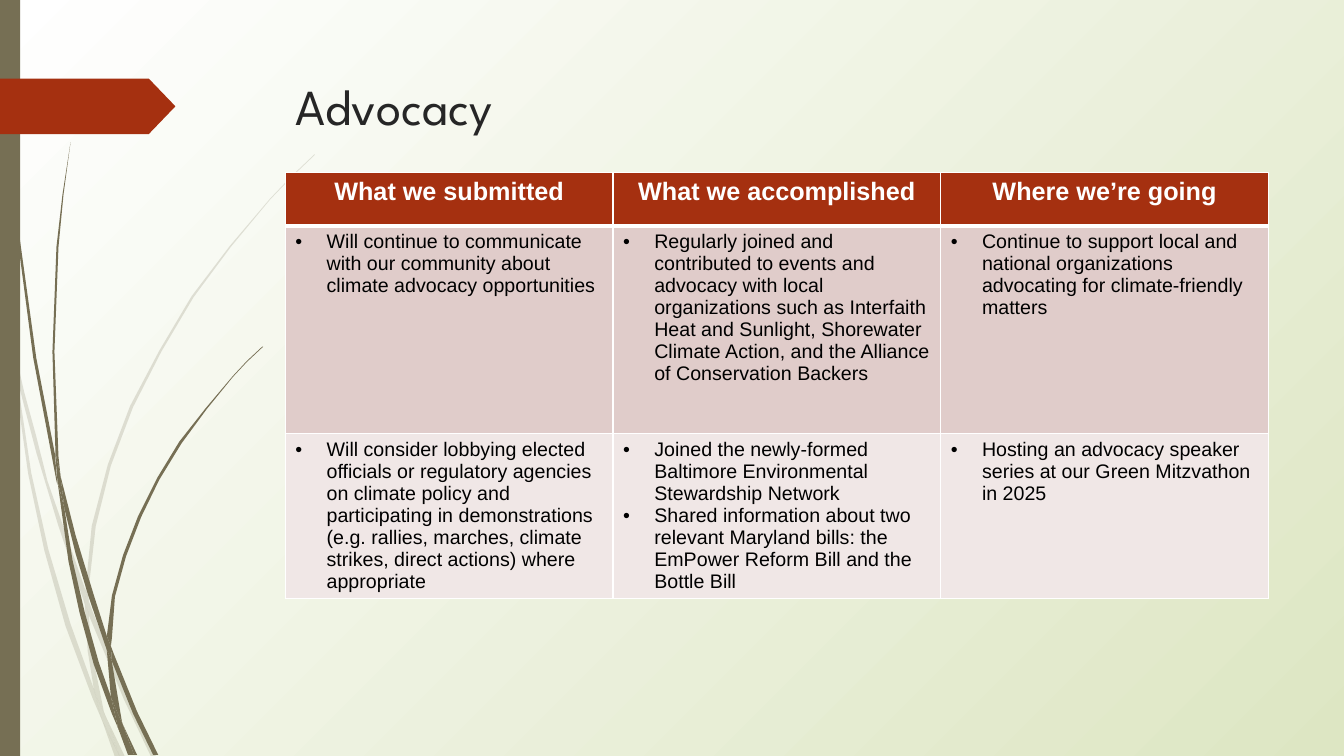
from dataclasses import dataclass

from lxml import etree
from pptx import Presentation
from pptx.dml.color import RGBColor
from pptx.enum import shapes, text
from pptx.oxml import ns
from pptx.util import Inches, Pt


@dataclass(frozen=True)
class Theme:
    stem: str = "766F54"
    rust: str = "A53010"
    pale: str = "DDE6C3"
    white: str = "FFFFFF"
    black: str = "000000"
    ink: str = "262626"
    bands: tuple = ("E0CCCA", "F0E7E6")
    head: str = "League Spartan"
    body: str = "Arial"
    title: int = 36
    label: int = 18
    item: int = 14


LOOK = Theme()

FAINT = [
    [(.11, 3.5), (.09, 3.22), (0, 2.82), (0, 2.99), (.1, 3.44)],
    [(.58, 5.22), (.84, 5.99), (.85, 5.86), (.62, 5.2), (.47, 4.77), (.36, 4.33),
     (.24, 3.89), (.14, 3.45), (.17, 3.76), (.36, 4.49)],
    [(.92, 6.07), (.88, 5.96), (.88, 6.1), (1.23, 6.94), (1.5, 7.51), (1.55, 7.51),
     (1.27, 6.92)],
    [(1.19, 7.51), (1.24, 7.51), (1.05, 7.11)],
    [(.93, 6.83), (.7, 6.19), (.48, 5.45), (.31, 4.69), (.17, 3.76), (.11, 3.5),
     (.28, 4.7), (.44, 5.46), (.65, 6.21), (.92, 6.93), (1.01, 7.14), (.99, 7.07)],
    [(.84, 5.99), (.87, 6.46), (.93, 6.83), (.96, 6.92), (1.05, 7.11), (1.03, 7.06),
     (.91, 6.46), (.88, 6.1), (.88, 6.08)],
    [(.88, 5.84), (.95, 5.22), (1.1, 4.62), (1.32, 4.04), (1.6, 3.49), (1.92, 2.95),
     (2.29, 2.45), (2.68, 1.98), (2.9, 1.75), (3.12, 1.54), (3.12, 1.53), (2.89, 1.75),
     (2.68, 1.97), (2.28, 2.44), (1.9, 2.94), (1.58, 3.48), (1.29, 4.03), (1.07, 4.61),
     (.91, 5.22), (.85, 5.84), (.85, 5.86), (.88, 5.96)],
    [(1.01, 7.14), (1.14, 7.51), (1.19, 7.51)],
    [(.88, 6.08), (.88, 6.1), (.88, 5.96), (.85, 5.86), (.84, 5.99)],
    [(.96, 6.92), (.93, 6.83), (.99, 7.07), (1.01, 7.14), (1.19, 7.51), (1.05, 7.11)],
]
DARK = [
    [(.07, 1.1), (.17, 2.33), (.33, 3.55), (.56, 4.77), (.57, 4.81), (.55, 4.57),
     (.55, 4.53), (.36, 3.55), (.19, 2.32), (.08, 1.09), (.05, .48), (.04, 0),
     (.03, 0), (.04, .48)],
    [(.88, 5.92), (1.06, 6.45), (1.06, 6.33), (1.06, 6.31), (.93, 5.9), (.75, 5.31),
     (.6, 4.72), (.64, 5.05), (.75, 5.49)],
    [(1.13, 6.49), (1.1, 6.41), (1.11, 6.56), (1.32, 7.08), (1.52, 7.49), (1.57, 7.49),
     (1.36, 7.06)],
    [(1.1, 6.91), (.98, 6.57), (.84, 6.07), (.72, 5.56), (.64, 5.05), (.57, 4.77),
     (.68, 5.57), (.79, 6.08), (.93, 6.59), (1.11, 7.08), (1.17, 7.22), (1.16, 7.17)],
    [(.6, 4.72), (.58, 4.53), (.54, 3.49), (.58, 2.45), (.63, 1.93), (.7, 1.41),
     (.62, 1.93), (.56, 2.45), (.52, 3.49), (.55, 4.49)],
    [(1.33, 7.49), (1.36, 7.49), (1.22, 7.19)],
    [(.57, 4.77), (.64, 5.05), (.6, 4.72), (.55, 4.49), (.55, 4.53)],
    [(1.11, 6.33), (1.14, 5.92), (1.25, 5.52), (1.4, 5.13), (1.58, 4.76), (1.8, 4.4),
     (2.05, 4.06), (2.31, 3.74), (2.45, 3.59), (2.61, 3.44), (2.6, 3.44), (2.45, 3.58),
     (2.31, 3.73), (2.04, 4.05), (1.78, 4.38), (1.56, 4.74), (1.37, 5.12), (1.22, 5.51),
     (1.11, 5.91), (1.06, 6.31), (1.1, 6.41)],
    [(1.17, 7.22), (1.27, 7.49), (1.31, 7.49)],
    [(1.06, 6.45), (1.1, 6.91), (1.16, 7.06), (1.22, 7.19), (1.21, 7.16), (1.11, 6.56),
     (1.09, 6.51)],
    [(1.06, 6.45), (1.09, 6.51), (1.11, 6.56), (1.1, 6.41), (1.06, 6.31), (1.06, 6.33)],
    [(1.16, 7.06), (1.1, 6.91), (1.16, 7.17), (1.17, 7.22), (1.3, 7.49), (1.33, 7.49),
     (1.22, 7.19)],
]

HEADS = ["What we submitted", "What we accomplished", "Where we’re going"]
ROWS = [
    [
        ["Will continue to communicate with our community about climate advocacy opportunities"],
        ["Regularly joined and contributed to events and advocacy with local "
         "organizations such as Interfaith Heat and Sunlight, Shorewater Climate Action, "
         "and the Alliance of Conservation Backers"],
        ["Continue to support local and national organizations advocating for "
         "climate-friendly matters"],
    ],
    [
        ["Will consider lobbying elected officials or regulatory agencies on climate "
         "policy and participating in demonstrations (e.g. rallies, marches, climate "
         "strikes, direct actions) where appropriate"],
        ["Joined the newly-formed Baltimore Environmental Stewardship Network",
         "Shared information about two relevant Maryland bills: the EmPower Reform "
         "Bill and the Bottle Bill"],
        ["Hosting an advocacy speaker series at our Green Mitzvathon in 2025"],
    ],
]


def rgb(code):
    return RGBColor.from_string(code)


def node(base, tag, **attrs):
    return etree.SubElement(base, ns.qn(tag), attrs)


def write(para, words, size, color, font, bold=False):
    run = para.add_run()
    run.text = words
    run.font.size = Pt(size)
    run.font.name = font
    run.font.bold = bold
    run.font.color.rgb = rgb(color)


def paint(shape, color, alpha=None):
    shape.shadow.inherit = False
    shape.fill.solid()
    shape.fill.fore_color.rgb = rgb(color)
    shape.line.fill.background()
    if alpha:
        tint = shape.element.spPr.find(".//" + ns.qn("a:srgbClr"))
        node(tint, "a:alpha", val=str(alpha * 1000))


def wash(slide):
    fill = slide.background.fill
    fill.gradient()
    for stop, color in zip(fill.gradient_stops, (LOOK.white, LOOK.pale)):
        stop.color.rgb = rgb(color)
    grad = slide.element.find(".//" + ns.qn("a:gradFill"))
    grad.remove(grad.find(ns.qn("a:lin")))
    focus = node(grad, "a:path", path="circle")
    node(focus, "a:fillToRect", r="100000", b="100000")


def add_blade(slide, edge, alpha=None):
    first, *rest = [(Inches(x), Inches(y)) for x, y in edge]
    form = slide.shapes.build_freeform(*first)
    form.add_line_segments(rest, close=True)
    paint(form.convert_to_shape(), LOOK.stem, alpha)


def add_block(slide, kind, box, color):
    shape = slide.shapes.add_shape(kind, *map(Inches, box))
    paint(shape, color)
    return shape


def set_title(slide, words):
    title = slide.shapes.title
    title.left, title.top = Inches(2.83), Inches(.69)
    title.width, title.height = Inches(9.75), Inches(1.4)
    frame = title.text_frame
    frame.word_wrap = True
    frame.auto_size = text.MSO_AUTO_SIZE.NONE
    frame.vertical_anchor = text.MSO_ANCHOR.TOP
    para = frame.paragraphs[0]
    para.alignment = text.PP_ALIGN.LEFT
    write(para, words, LOOK.title, LOOK.ink, LOOK.head)


def style(cell, color, base=1):
    cell.fill.solid()
    cell.fill.fore_color.rgb = rgb(color)
    props = cell._tc.get_or_add_tcPr()
    for i, (side, size) in enumerate(zip("LRTB", (1, 1, 1, base))):
        line = etree.Element(ns.qn("a:ln" + side), w=str(Pt(size)))
        node(node(line, "a:solidFill"), "a:srgbClr", val=LOOK.white)
        props.insert(i, line)


def bullet(para):
    props = para._p.get_or_add_pPr()
    props.set("marL", str(Inches(.31)))
    props.set("indent", str(Inches(-.31)))
    node(node(props, "a:buClr"), "a:srgbClr", val=LOOK.black)
    node(props, "a:buFont", typeface=LOOK.body)
    node(props, "a:buChar", char="•")


def add_grid(slide):
    high = (.53, 2.06, 1.64)
    grid = slide.shapes.add_table(
        len(high), len(HEADS), Inches(2.83), Inches(1.71), Inches(9.75), Inches(sum(high))
    ).table
    for row, size in zip(grid.rows, high):
        row.height = Inches(size)
    for col, words in enumerate(HEADS):
        cell = grid.cell(0, col)
        style(cell, LOOK.rust, 3)
        para = cell.text_frame.paragraphs[0]
        para.alignment = text.PP_ALIGN.CENTER
        write(para, words, LOOK.label, LOOK.white, LOOK.body, True)
    for r, (row, color) in enumerate(zip(ROWS, LOOK.bands), 1):
        for col, items in enumerate(row):
            cell = grid.cell(r, col)
            style(cell, color)
            frame = cell.text_frame
            for i, words in enumerate(items):
                para = frame.add_paragraph() if i else frame.paragraphs[0]
                bullet(para)
                write(para, words, LOOK.item, LOOK.black, LOOK.body)


def main():
    deck = Presentation()
    deck.slide_width, deck.slide_height = Inches(13.33), Inches(7.5)
    slide = deck.slides.add_slide(deck.slide_layouts[5])
    wash(slide)
    for edge in FAINT:
        add_blade(slide, edge, 20)
    for edge in DARK:
        add_blade(slide, edge)
    add_block(slide, shapes.MSO_SHAPE.RECTANGLE, (0, 0, .2, 7.5), LOOK.stem)
    flag = add_block(slide, shapes.MSO_SHAPE.PENTAGON, (0, .78, 1.74, .55), LOOK.rust)
    flag.adjustments[0] = .48
    set_title(slide, "Advocacy")
    add_grid(slide)
    deck.save("out.pptx")


if __name__ == "__main__":
    main()
